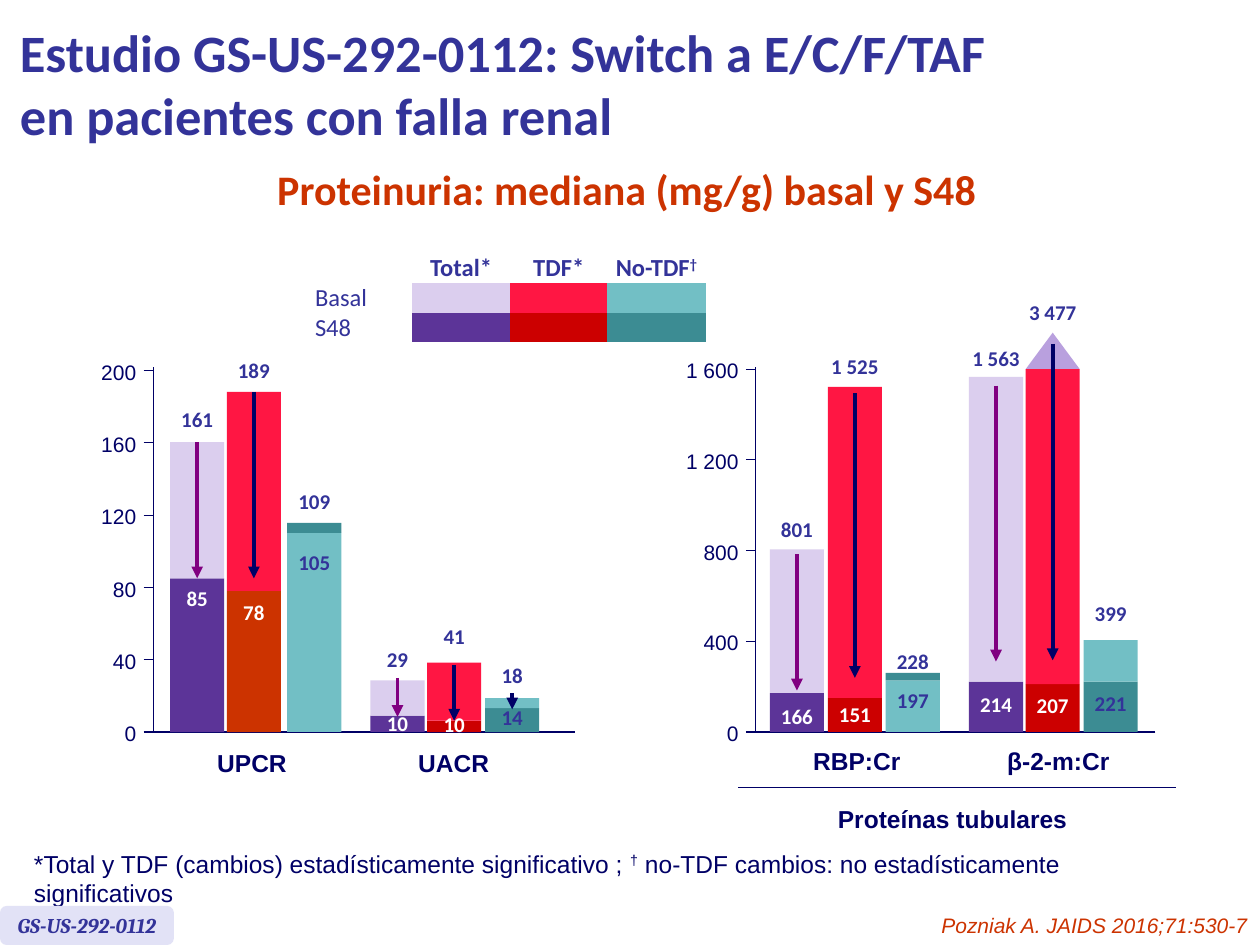
"""Build the proteinuria slide of the E/C/F/TAF switch study."""
from typing import NamedTuple, Optional

from lxml import etree
from pptx import Presentation
from pptx import util as u
from pptx.dml import color as col
from pptx.enum import shapes, text
from pptx.oxml import ns

NAVY, BLUE, RUST, PLUM, WHITE = "000066", "333399", "CC3300", "800080", "FFFFFF"
LILAC, GRAPE, ROSE, RED, AQUA, TEAL = "DBCEEE", "5C3498", "FF1643", "CC0000", "72BFC5", "3C8C93"
LEFT, MID, RIGHT = text.PP_ALIGN.LEFT, text.PP_ALIGN.CENTER, text.PP_ALIGN.RIGHT
BASE, WIDE, TALL = 5.81, 0.43, 0.3

TITLE = dict(name="Calibri", size=u.Pt(30), bold=True, color=BLUE)
HEAD = dict(TITLE, size=u.Pt(24), color=RUST)
KEY = dict(TITLE, size=u.Pt(14))
PLAIN = dict(KEY, bold=False)
VALUE = dict(TITLE, size=u.Pt(12))
TICK = dict(name="Arial", size=u.Pt(12), color=NAVY)
NOTE = dict(TICK, size=u.Pt(14))
GROUP = dict(NOTE, bold=True)
CITE = dict(TICK, italic=True, color=RUST)
TAG = dict(name="Cambria", size=u.Pt(12), bold=True, italic=True, color=BLUE)


class Tone(NamedTuple):
    high: str
    low: str
    ink: str
    arrow: str


class Bar(NamedTuple):
    left: float
    top: float
    split: float
    tone: Tone
    label: str
    label_y: float
    inner: str
    inner_y: float
    arrow: Optional[tuple] = None


class Axis(NamedTuple):
    left: float
    right: float
    first: float
    ticks: tuple


class Name(NamedTuple):
    left: float
    top: float
    width: float
    words: str


TOTAL = Tone(LILAC, GRAPE, WHITE, PLUM)
TDF = Tone(ROSE, RED, WHITE, NAVY)
OTHER = Tone(AQUA, TEAL, BLUE, NAVY)
RISE = Tone(TEAL, AQUA, BLUE, NAVY)

AXES = (
    Axis(1.22, 4.56, 2.94, ("200", "160", "120", "80", "40", "0")),
    Axis(6, 9.17, 2.93, ("1 600", "1 200", "800", "400", "0")),
)
BARS = (
    Bar(1.35, 3.51, 4.59, TOTAL, "161", 3.18, "85", 4.6, (3.51, 4.59)),
    Bar(1.8, 3.11, 4.69, TDF._replace(low=RUST), "189", 2.79, "78", 4.71, (3.11, 4.59)),
    Bar(2.28, 4.15, 4.23, RISE, "109", 3.83, "105", 4.31),
    Bar(2.94, 5.4, 5.68, TOTAL, "29", 5.08, "10", 5.59, (5.38, 5.69)),
    Bar(3.39, 5.26, 5.72, TDF, "41", 4.9, "10", 5.6, (5.28, 5.72)),
    Bar(3.85, 5.54, 5.62, OTHER, "18", 5.21, "14", 5.54, (5.5, 5.63)),
    Bar(6.11, 4.36, 5.5, TOTAL, "801", 4.05, "166", 5.53, (4.4, 5.48)),
    Bar(6.57, 3.07, 5.54, TDF, "1 525", 2.76, "151", 5.52, (3.12, 5.38)),
    Bar(7.03, 5.34, 5.4, RISE, "228", 5.1, "197", 5.41),
    Bar(7.69, 2.99, 5.41, TOTAL, "1 563", 2.69, "214", 5.44, (3.06, 5.25)),
    Bar(8.14, 2.93, 5.43, TDF, "3 477", 2.33, "207", 5.45, (2.73, 5.24)),
    Bar(8.6, 5.08, 5.41, OTHER, "399", 4.72, "221", 5.43),
)
NAMES = (
    Name(1.2, 5.91, 1.6, "UPCR"),
    Name(2.8, 5.91, 1.6, "UACR"),
    Name(6, 5.9, 1.6, "RBP:Cr"),
    Name(7.6, 5.9, 1.6, "β-2-m:Cr"),
    Name(6.42, 6.36, 2.28, "Proteínas tubulares"),
)


def paint(target, code: str) -> None:
    """Set a font or line colour, or a solid fill."""
    if hasattr(target, "solid"):
        target.solid()
        target = target.fore_color
    else:
        target = target.color
    target.rgb = col.RGBColor.from_string(code)


def style(font, form: dict) -> None:
    """Apply format values to a font."""
    for key, value in form.items():
        if key == "color":
            paint(font, value)
        else:
            setattr(font, key, value)


def write(frame, words: str, form: dict, align=LEFT) -> None:
    """Write one paragraph, raising each dagger."""
    para = frame.paragraphs[0]
    para.alignment = align
    for piece in words.replace("†", "|†|").split("|"):
        if not piece:
            continue
        for count, line in enumerate(piece.split("\n")):
            if count:
                para.add_line_break()
            run = para.add_run()
            run.text = line
            style(run.font, form)
            if piece == "†":
                run._r.get_or_add_rPr().set("baseline", "30000")


def label(slide, box: tuple, words: str, form: dict, align=MID, wrap=False, inset=0.1) -> None:
    """Add a text box centred in height."""
    frame = slide.shapes.add_textbox(*map(u.Inches, box)).text_frame
    frame.word_wrap = wrap
    frame.vertical_anchor = text.MSO_ANCHOR.MIDDLE
    frame.margin_left = frame.margin_right = u.Inches(inset)
    frame.margin_top = frame.margin_bottom = 0
    write(frame, words, form, align)


def block(slide, box: tuple, code: str, kind=shapes.MSO_SHAPE.RECTANGLE):
    """Add a filled shape without outline."""
    shape = slide.shapes.add_shape(kind, *map(u.Inches, box))
    shape.shadow.inherit = False
    paint(shape.fill, code)
    shape.line.fill.background()
    return shape


def rule(slide, ends: tuple, code: str, width: float, arrow=False):
    """Add a straight line, with an arrowhead if asked."""
    line = slide.shapes.add_connector(shapes.MSO_CONNECTOR.STRAIGHT, *map(u.Inches, ends))
    paint(line.line, code)
    line.line.width = u.Pt(width)
    if arrow:
        etree.SubElement(line.line._get_or_add_ln(), ns.qn("a:tailEnd"), type="triangle")
    etree.SubElement(line._element.spPr, ns.qn("a:effectLst"))
    return line


def draw_axis(slide, axis: Axis) -> None:
    """Draw an axis with its ticks and tick labels."""
    pen = slide.shapes.build_freeform(u.Inches(axis.right), u.Inches(BASE))
    points = [(axis.left, BASE), (axis.left, 2.91)]
    pen.add_line_segments([tuple(map(u.Inches, point)) for point in points], close=False)
    frame = pen.convert_to_shape()
    frame.shadow.inherit = False
    frame.fill.background()
    paint(frame.line, NAVY)
    frame.line.width = u.Pt(0.63)
    step = (BASE - axis.first) / (len(axis.ticks) - 1)
    for count, words in enumerate(axis.ticks):
        y = axis.first + count * step
        rule(slide, (axis.left - 0.08, y, axis.left, y), NAVY, 0.63)
        label(slide, (axis.left - 0.69, y - 0.14, 0.65, TALL), words, TICK, RIGHT)


def draw_bar(slide, bar: Bar) -> None:
    """Draw a two-part bar with its values and arrow."""
    low = block(slide, (bar.left, bar.split, WIDE, BASE - bar.split), bar.tone.low)
    high = block(slide, (bar.left, bar.top, WIDE, bar.split - bar.top), bar.tone.high)
    mid = bar.left + WIDE / 2
    if bar.arrow:
        start, end = bar.arrow
        line = rule(slide, (mid, start, mid, end), bar.tone.arrow, 2.25, True)
        if start == bar.top:
            line.begin_connect(high, 0)
        if end == bar.split:
            line.end_connect(low, 0)
    label(slide, (mid - 0.3, bar.label_y, 0.6, TALL), bar.label, VALUE)
    label(slide, (mid - 0.23, bar.inner_y, 0.46, TALL), bar.inner, dict(VALUE, color=bar.tone.ink))


def draw_key(slide) -> None:
    """Draw the colour key as a table."""
    rows = (("", "Total*", "TDF*", "No-TDF†"), ("Basal", LILAC, ROSE, AQUA), ("S48", GRAPE, RED, TEAL))
    table = slide.shapes.add_table(3, 4, *map(u.Inches, (2.5, 1.91, 3.1, 0.8))).table
    table.first_row = table.horz_banding = False
    table._tbl.tblPr.find(ns.qn("a:tableStyleId")).text = "{2D5ABB26-0587-4C30-8999-92F81FD0307C}"
    for column, width in zip(table.columns, (0.77, 0.78, 0.77, 0.78)):
        column.width = u.Inches(width)
    for r, row in enumerate(rows):
        table.rows[r].height = u.Inches(0.23 if r else 0.34)
        for c, item in enumerate(row):
            cell = table.cell(r, c)
            for side in ("left", "right", "top", "bottom"):
                setattr(cell, f"margin_{side}", 0)
            cell.vertical_anchor = text.MSO_ANCHOR.MIDDLE if r else text.MSO_ANCHOR.BOTTOM
            if r and c:
                paint(cell.fill, item)
                item = ""
            else:
                cell.fill.background()
            if item:
                write(cell.text_frame, item, PLAIN if r else KEY, LEFT if r else MID)
            else:
                etree.SubElement(cell.text_frame.paragraphs[0]._p, ns.qn("a:endParaRPr"), sz="1200")


def main() -> None:
    """Build and save the slide."""
    deck = Presentation()
    deck.slide_width, deck.slide_height = u.Inches(10), u.Inches(7.5)
    slide = deck.slides.add_slide(deck.slide_layouts[6])
    title = "Estudio GS-US-292-0112: Switch a E/C/F/TAF\nen pacientes con falla renal"
    label(slide, (0.06, 0.05, 9.94, 1.21), title, TITLE, LEFT, True)
    label(slide, (1.06, 1.25, 7.83, 0.5), "Proteinuria: mediana (mg/g) basal y S48", HEAD, wrap=True)
    draw_key(slide)
    for axis in AXES:
        draw_axis(slide, axis)
    block(slide, (8.14, 2.64, WIDE, 0.29), "B9A0DE", shapes.MSO_SHAPE.ISOSCELES_TRIANGLE)
    for bar in BARS:
        draw_bar(slide, bar)
    for name in NAMES:
        label(slide, (name.left, name.top, name.width, 0.28), name.words, GROUP)
    rule(slide, (5.86, 6.25, 9.33, 6.25), NAVY, 1)
    note = ("*Total y TDF (cambios) estadísticamente significativo ; †"
            " no-TDF cambios: no estadísticamente significativos")
    label(slide, (0.27, 6.88, 9.3, 0.18), note, NOTE, LEFT, inset=0)
    tag = block(slide, (0, 7.19, 1.38, 0.31), "E2E2F6", shapes.MSO_SHAPE.ROUNDED_RECTANGLE)
    tag.text_frame.word_wrap = False
    tag.text_frame.vertical_anchor = text.MSO_ANCHOR.MIDDLE
    write(tag.text_frame, "GS-US-292-0112", TAG, MID)
    label(slide, (5.36, 7.19, 4.64, TALL), "Pozniak A. JAIDS 2016;71:530-7", CITE, RIGHT, True)
    deck.save("out.pptx")


if __name__ == "__main__":
    main()
